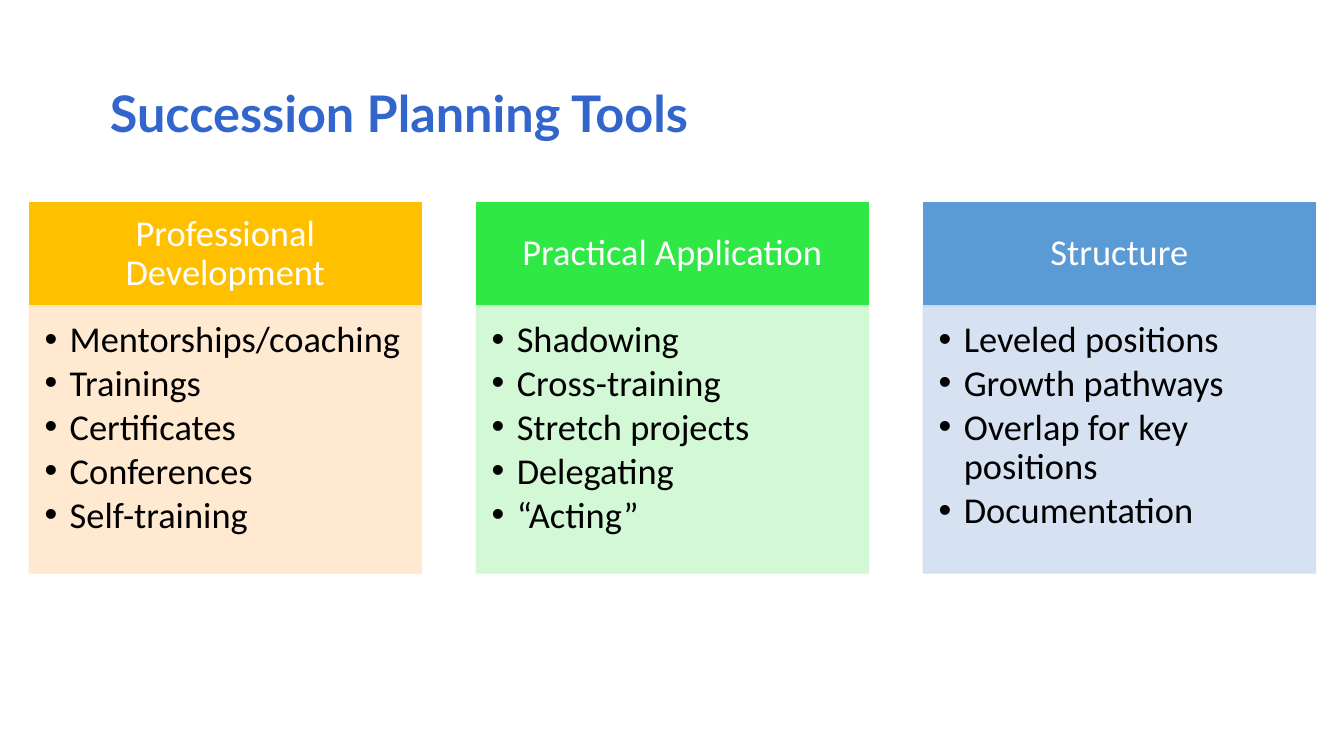
"""Build the slide on succession planning tools."""
from lxml import etree
from pptx import Presentation
from pptx.dml.color import RGBColor
from pptx.enum.shapes import MSO_SHAPE
from pptx.enum.text import MSO_ANCHOR, MSO_AUTO_SIZE, PP_ALIGN
from pptx.oxml.ns import qn
from pptx.util import Pt

RECT = MSO_SHAPE.RECTANGLE
TOP, MIDDLE = MSO_ANCHOR.TOP, MSO_ANCHOR.MIDDLE
LEFT, CENTER = PP_ALIGN.LEFT, PP_ALIGN.CENTER
NO_FIT = MSO_AUTO_SIZE.NONE

COLORS = {
    "title": "3366CC", "white": "FFFFFF", "black": "000000",
    "gold": "FFC000", "cream": "FFE8CC",
    "green": "30E845", "mint": "CFF8D1",
    "blue": "5B9BD5", "pale": "D2DFF0",
}
TOOLS = [
    ("Professional Development", "gold", "cream",
     ["Mentorships/coaching", "Trainings", "Certificates", "Conferences", "Self-training"]),
    ("Practical Application", "green", "mint",
     ["Shadowing", "Cross-training", "Stretch projects", "Delegating", "“Acting”"]),
    ("Structure", "blue", "pale",
     ["Leveled positions", "Growth pathways", "Overlap for key positions", "Documentation"]),
]
START, STEP, WIDTH = 20.9, 319.3, 280.2
HEAD_TOP, HEAD_HIGH = 144.6, 73.9
LIST_TOP, LIST_HIGH = 218.4, 190.8
INDENT = 18


def add_box(left, top, high, color, anchor, insets):
    box = slide.shapes.add_shape(RECT, Pt(left), Pt(top), Pt(WIDTH), Pt(high))
    box.shadow.inherit = False
    box.fill.solid()
    box.fill.fore_color.rgb = RGBColor.from_string(COLORS[color])
    box.line.color.rgb = RGBColor.from_string(COLORS[color])
    box.line.width = Pt(1)
    frame = box.text_frame
    frame.word_wrap = True
    frame.vertical_anchor = anchor
    frame.margin_left, frame.margin_top, frame.margin_right, frame.margin_bottom = map(Pt, insets)
    return box


def add_run(para, text, font, size, color, align, space):
    para.alignment = align
    para.line_spacing = space
    run = para.add_run()
    run.text = text
    run.font.name = font
    run.font.size = Pt(size)
    run.font.color.rgb = RGBColor.from_string(COLORS[color])
    return run


deck = Presentation()
deck.slide_width, deck.slide_height = Pt(960), Pt(540)
slide = deck.slides.add_slide(deck.slide_layouts[5])

title = slide.shapes.title
title.left, title.top, title.width, title.height = Pt(78.5), Pt(31), Pt(802.8), Pt(93.6)
frame = title.text_frame
frame.auto_size = NO_FIT
frame.word_wrap = True
frame.vertical_anchor = MIDDLE
frame.margin_left = frame.margin_top = frame.margin_right = frame.margin_bottom = 0
run = add_run(frame.paragraphs[0], "Succession Planning Tools", "Lato", 36, "title", LEFT, 1.1)
run.font.bold = True

for col, (name, dark, light, items) in enumerate(TOOLS):
    left = START + col * STEP
    head = add_box(left, HEAD_TOP, HEAD_HIGH, dark, MIDDLE, (14.6, 8.3, 14.6, 8.3))
    add_run(head.text_frame.paragraphs[0], name, "Calibri", 26, "white", CENTER, 0.9)

    panel = add_box(left, LIST_TOP, LIST_HIGH, light, TOP, (10.9, 10.9, 14.6, 16.4))
    for tint in panel.element.spPr.iter(qn("a:srgbClr")):
        etree.SubElement(tint, qn("a:alpha"), val="90000")
    for row, item in enumerate(items):
        frame = panel.text_frame
        para = frame.add_paragraph() if row else frame.paragraphs[0]
        props = para._p.get_or_add_pPr()
        props.set("marL", str(Pt(INDENT)))
        props.set("indent", str(-Pt(INDENT)))
        etree.SubElement(props, qn("a:buFont"), typeface="Arial")
        etree.SubElement(props, qn("a:buChar"), char="•")
        add_run(para, item, "Calibri", 26, "black", LEFT, 0.9)
        para.space_after = Pt(3.3)

deck.save("out.pptx")
